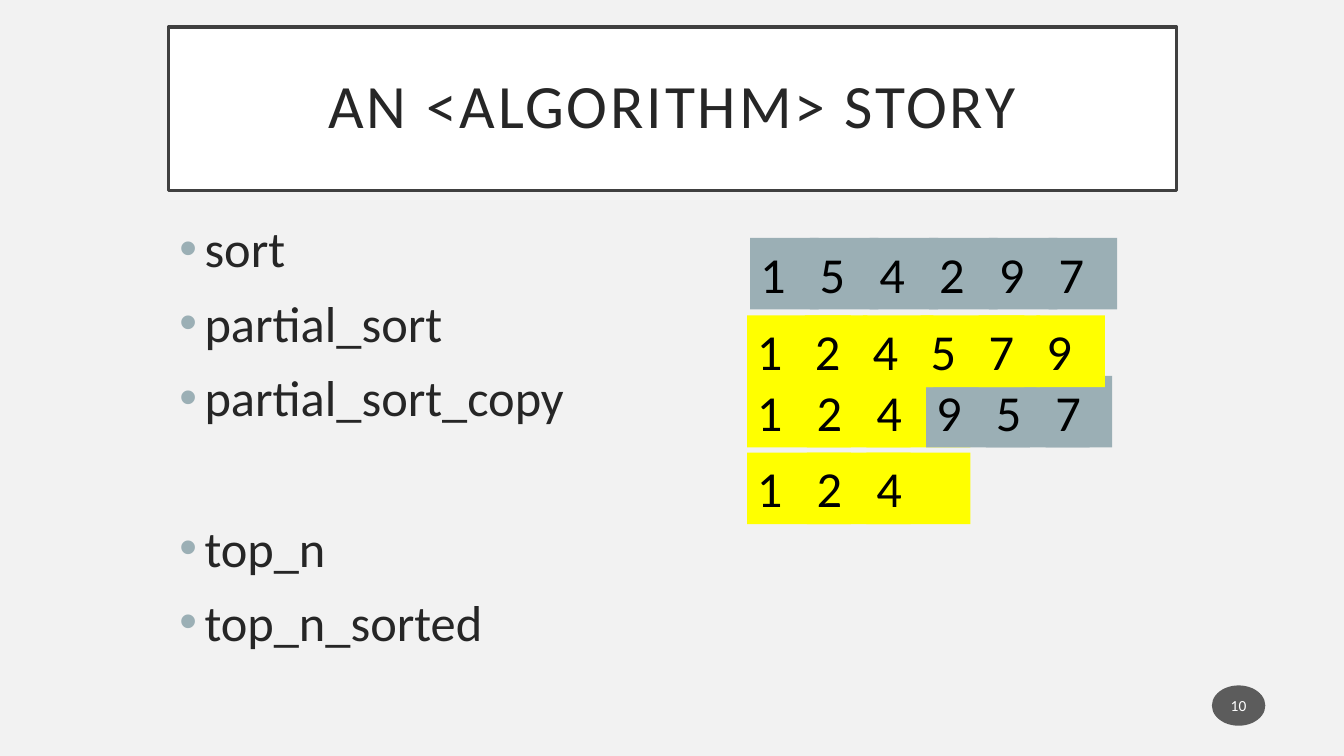
"""Builds the slide that compares sorting algorithms on a row of digits."""
import pptx
import pptx.util
import pptx.dml.color
import pptx.enum.shapes
import pptx.enum.text
import pptx.oxml
import pptx.oxml.ns
import lxml.etree

RGBColor = pptx.dml.color.RGBColor
Pt = pptx.util.Pt
SHAPES = pptx.enum.shapes.MSO_SHAPE
ANCHOR = pptx.enum.text.MSO_ANCHOR
ALIGN = pptx.enum.text.PP_ALIGN
qn = pptx.oxml.ns.qn

BACKGROUND = RGBColor(0xF2, 0xF2, 0xF2)
WHITE = RGBColor(0xFF, 0xFF, 0xFF)
BLACK = RGBColor(0, 0, 0)
INK = RGBColor(0x26, 0x26, 0x26)
FRAME = RGBColor(0x40, 0x40, 0x40)
BADGE = RGBColor(0x1D, 0x1D, 0x1D)
UNSORTED = RGBColor(0x9B, 0xAF, 0xB5)
SORTED = RGBColor(0xFF, 0xFF, 0)

FONT = "Calibri"
TITLE = "AN <ALGORITHM> STORY"
PAGE = "10"
FUNCTION_GROUPS = [["sort", "partial_sort", "partial_sort_copy"], ["top_n", "top_n_sorted"]]

GRID_COLUMNS, GRID_ROWS = 1333, 750
TITLE_BOX = (167, 27, 1000, 162)
FUNCTIONS_BOX = (168, 211, 502, 476)
PAGE_BOX = (1202, 680, 53, 40)
CELL_HEIGHT = 71
LINE_GAP, GROUP_GAP = 10, 64

DIGIT_ROWS = [
    {"digits": "154297", "sorted": 0, "left": 744, "top": 236, "pitch": 59.2,
     "widths": [68] * 6},
    {"digits": "124957", "sorted": 3, "left": 741, "top": 373, "pitch": 59.2,
     "widths": [103] * 5 + [66]},
    {"digits": "124579", "sorted": 6, "left": 741, "top": 313, "pitch": 57.4,
     "widths": [103, 62, 70, 103, 61, 68]},
    {"digits": "124", "sorted": 3, "left": 741, "top": 449, "pitch": 59.2,
     "widths": [103] * 3},
]

deck = pptx.Presentation()
deck.slide_width = pptx.util.Inches(13.33)
deck.slide_height = pptx.util.Inches(7.5)
slide = deck.slides.add_slide(deck.slide_layouts[6])
slide.background.fill.solid()
slide.background.fill.fore_color.rgb = BACKGROUND


def place(box):
    left, top, width, height = box
    across, down = deck.slide_width / GRID_COLUMNS, deck.slide_height / GRID_ROWS
    return [round(n) for n in (left * across, top * down, width * across, height * down)]


def style(paragraph, size, color):
    for run in paragraph.runs:
        run.font.name = FONT
        run.font.size = Pt(size)
        run.font.color.rgb = color


def add_block(kind, box, text, fill, size, color, align, anchor, insets):
    block = slide.shapes.add_shape(kind, *place(box))
    block.shadow.inherit = False
    block.fill.solid()
    block.fill.fore_color.rgb = fill
    block.line.fill.background()
    frame = block.text_frame
    frame.text = text
    frame.word_wrap = True
    frame.vertical_anchor = anchor
    side, edge = insets
    frame.margin_left = frame.margin_right = pptx.util.Inches(side)
    frame.margin_top = frame.margin_bottom = pptx.util.Inches(edge)
    frame.paragraphs[0].alignment = align
    style(frame.paragraphs[0], size, color)
    return block


def add_bullet(paragraph):
    properties = paragraph._p.get_or_add_pPr()
    indent = pptx.util.Inches(0.25)
    properties.set("marL", str(indent))
    properties.set("indent", str(-indent))
    bullet_color = lxml.etree.SubElement(properties, qn("a:buClr"))
    lxml.etree.SubElement(bullet_color, qn("a:srgbClr"), val=str(UNSORTED))
    lxml.etree.SubElement(properties, qn("a:buFont"), typeface="Arial")
    lxml.etree.SubElement(properties, qn("a:buChar"), char="•")


title = add_block(SHAPES.RECTANGLE, TITLE_BOX, TITLE, WHITE, 44, INK,
                  ALIGN.CENTER, ANCHOR.MIDDLE, (0.2, 0.2))
title.line.color.rgb = FRAME
title.line.width = Pt(2.5)
heading = title.text_frame.paragraphs[0]
heading.line_spacing = 0.9
heading.runs[0].font._element.set("spc", "200")

functions = slide.shapes.add_textbox(*place(FUNCTIONS_BOX)).text_frame
functions.word_wrap = True
functions.text = "\n".join(name for group in FUNCTION_GROUPS for name in group)
group_starts = [group[0] for group in FUNCTION_GROUPS[1:]]
for entry in functions.paragraphs:
    entry.space_before = Pt(GROUP_GAP if entry.text in group_starts else LINE_GAP)
    add_bullet(entry)
    style(entry, 36, INK)

page = add_block(SHAPES.OVAL, PAGE_BOX, PAGE, BADGE, 11, WHITE,
                 ALIGN.CENTER, ANCHOR.MIDDLE, (0.02, 0.05))
badge_color = page.fill._xPr.find(qn("a:solidFill")).find(qn("a:srgbClr"))
lxml.etree.SubElement(badge_color, qn("a:alpha"), val="70000")

for row in DIGIT_ROWS:
    for column, (digit, width) in enumerate(zip(row["digits"], row["widths"])):
        cell = (row["left"] + column * row["pitch"], row["top"], width, CELL_HEIGHT)
        fill = SORTED if column < row["sorted"] else UNSORTED
        add_block(SHAPES.RECTANGLE, cell, digit, fill, 36, BLACK,
                  ALIGN.LEFT, ANCHOR.TOP, (0.1, 0.05))

deck.save("out.pptx")
